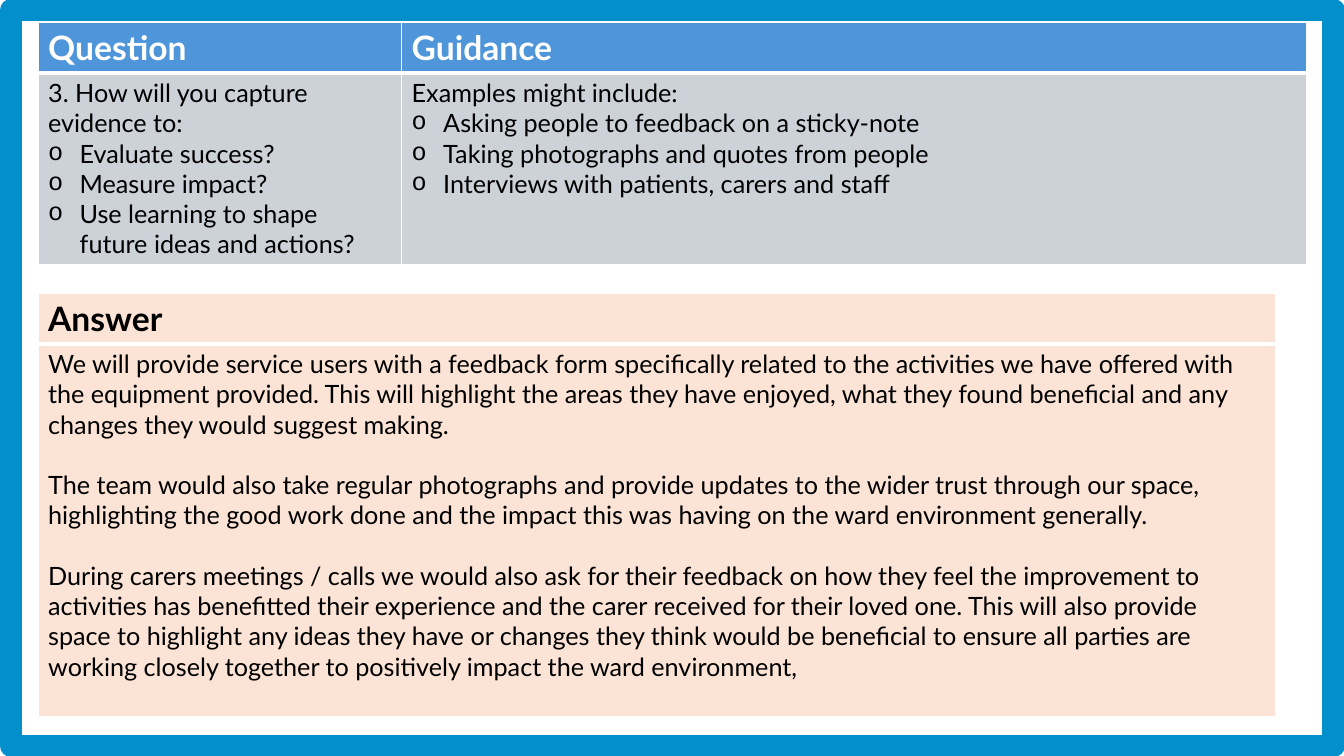
from lxml import etree
from pptx import Presentation
from pptx.dml.color import RGBColor
from pptx.enum.shapes import MSO_SHAPE
from pptx.oxml.ns import qn
from pptx.util import Pt

RECTANGLE = MSO_SHAPE.RECTANGLE
FONT = "Lato"
HEADER_SIZE, BODY_SIZE = 24, 18
BLANK_LINE = 21.6
BULLET_INDENT = 22.5
COLORS = {
    "frame": "038ECC",
    "question header": "4E95D9",
    "question body": "CCD2D8",
    "answer": "FBE3D6",
    "white": "FFFFFF",
    "black": "000000",
}

# Content: each column has a heading, plain paragraphs and bullets
QUESTION_COLUMNS = [
    ("Question", ["3. How will you capture evidence to:"],
     ["Evaluate success?", "Measure impact?",
      "Use learning to shape future ideas and actions?"]),
    ("Guidance", ["Examples might include:"],
     ["Asking people to feedback on a sticky-note",
      "Taking photographs and quotes from people",
      "Interviews with patients, carers and staff"]),
]
ANSWER_COLUMNS = [
    ("Answer", [
        "We will provide service users with a feedback form specifically related to "
        "the activities we have offered with the equipment provided. This will "
        "highlight the areas they have enjoyed, what they found beneficial and any "
        "changes they would suggest making.",
        "The team would also take regular photographs and provide updates to the "
        "wider trust through our space, highlighting the good work done and the "
        "impact this was having on the ward environment generally.",
        "During carers meetings / calls we would also ask for their feedback on how "
        "they feel the improvement to activities has benefitted their experience and "
        "the carer received for their loved one. This will also provide space to "
        "highlight any ideas they have or changes they think would be beneficial to "
        "ensure all parties are working closely together to positively impact the "
        "ward environment,"], []),
]

# Layout in points
TABLE_LEFT = 27.2
HEADER_HEIGHT = 36
TABLES = [
    {"columns": QUESTION_COLUMNS, "top": 16, "widths": [259.7, 646.3],
     "body height": 136.8, "header fill": "question header",
     "body fill": "question body", "header text": "white"},
    {"columns": ANSWER_COLUMNS, "top": 209.5, "widths": [884.2],
     "body height": 266.4, "header fill": "answer",
     "body fill": "answer", "header text": "black"},
]


def rgb(name):
    return RGBColor.from_string(COLORS[name])


def style_cell(cell, fill, top_width, bottom_width):
    cell.fill.solid()
    cell.fill.fore_color.rgb = rgb(fill)
    properties = cell._tc.get_or_add_tcPr()
    borders = [("L", 1), ("R", 1), ("T", top_width), ("B", bottom_width)]
    for position, (side, width) in enumerate(borders):
        line = etree.Element(qn(f"a:ln{side}"), w=str(Pt(width)))
        solid = etree.SubElement(line, qn("a:solidFill"))
        etree.SubElement(solid, qn("a:srgbClr"), val=COLORS["white"])
        properties.insert(position, line)


def add_bullet(paragraph):
    properties = paragraph._p.get_or_add_pPr()
    properties.set("marL", str(Pt(BULLET_INDENT)))
    properties.set("indent", str(-Pt(BULLET_INDENT)))
    etree.SubElement(properties, qn("a:buFont"), typeface="Courier New")
    etree.SubElement(properties, qn("a:buChar"), char="o")


def write_cell(cell, texts, bullets, size, color, bold):
    frame = cell.text_frame
    frame.text = "\n".join(texts + bullets)
    for index, paragraph in enumerate(frame.paragraphs):
        if index >= len(texts):
            add_bullet(paragraph)
        elif index < len(texts) - 1:
            paragraph.space_after = Pt(BLANK_LINE)
        font = paragraph.font
        font.name, font.size, font.bold = FONT, Pt(size), bold
        font.color.rgb = rgb(color)


def add_panel(slide, panel):
    widths = panel["widths"]
    heights = [HEADER_HEIGHT, panel["body height"]]
    table = slide.shapes.add_table(
        2, len(widths), Pt(TABLE_LEFT), Pt(panel["top"]),
        Pt(sum(widths)), Pt(sum(heights))).table
    for row, height in zip(table.rows, heights):
        row.height = Pt(height)
    for index, (heading, texts, bullets) in enumerate(panel["columns"]):
        table.columns[index].width = Pt(widths[index])
        header, body = table.cell(0, index), table.cell(1, index)
        write_cell(header, [heading], [], HEADER_SIZE, panel["header text"], True)
        write_cell(body, texts, bullets, BODY_SIZE, "black", False)
        style_cell(header, panel["header fill"], 1, 3)
        style_cell(body, panel["body fill"], 3, 1)


def main():
    presentation = Presentation()
    presentation.slide_width, presentation.slide_height = Pt(960), Pt(540)
    slide = presentation.slides.add_slide(presentation.slide_layouts[6])

    # Frame around the slide
    frame = slide.shapes.add_shape(RECTANGLE, Pt(8), Pt(7.2), Pt(944.6), Pt(525.6))
    frame.shadow.inherit = False
    frame.fill.background()
    frame.line.color.rgb = rgb("frame")
    frame.line.width = Pt(16)

    # Question and answer tables
    for panel in TABLES:
        add_panel(slide, panel)
    presentation.save("out.pptx")


if __name__ == "__main__":
    main()
